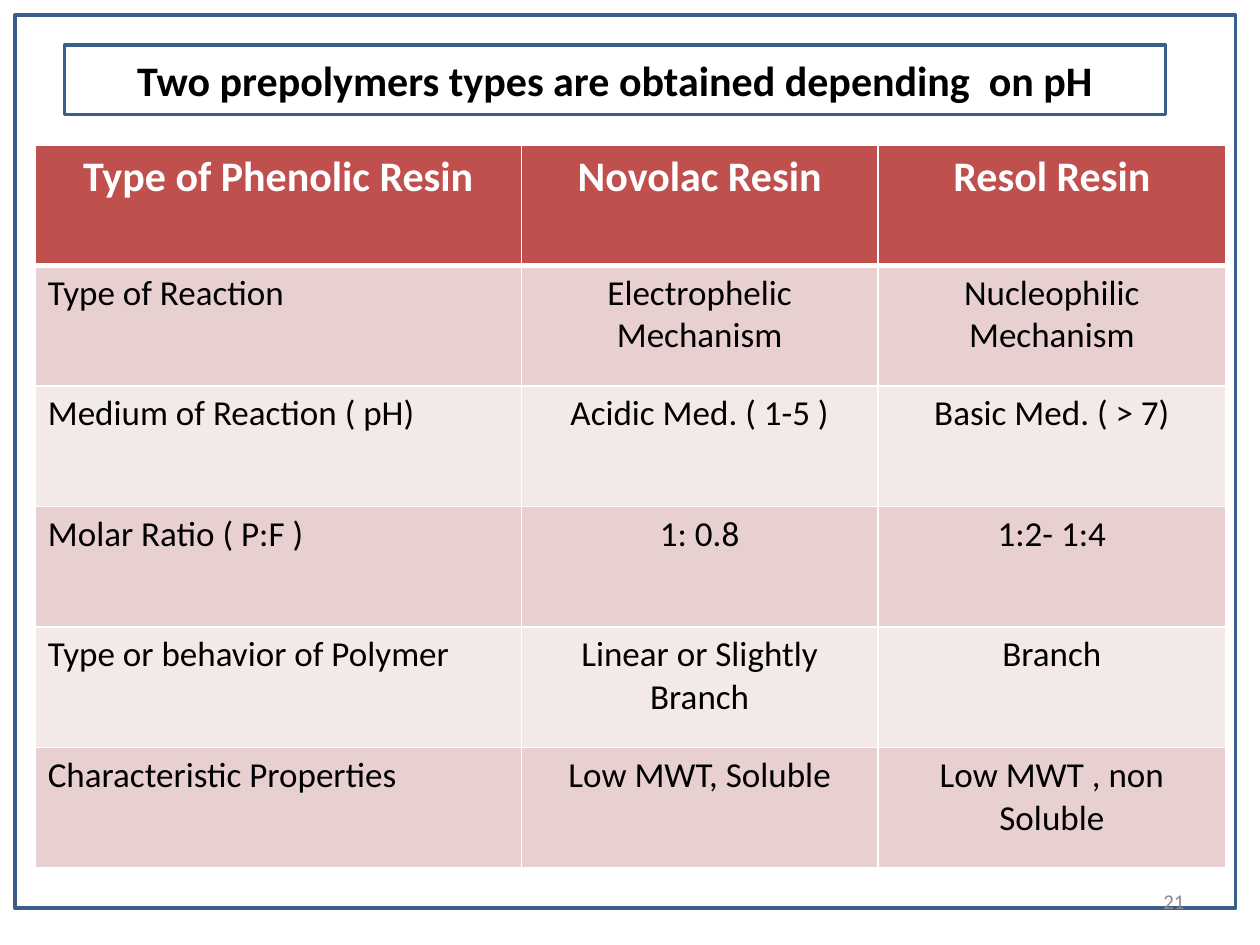
import pptx
import pptx.dml.color
import pptx.enum.shapes
import pptx.enum.text
import pptx.oxml
import pptx.oxml.ns
import pptx.util
from pptx.util import Cm, Pt

ALIGN = pptx.enum.text.PP_ALIGN
ANCHOR = pptx.enum.text.MSO_ANCHOR

TITLE = "Two prepolymers types are obtained depending  on pH"
PAGE_NUMBER = "21"
ROWS = [
    ("Type of Phenolic Resin", "Novolac Resin", "Resol Resin"),
    ("Type of Reaction", "Electrophelic Mechanism", "Nucleophilic Mechanism"),
    ("Medium of Reaction ( pH)", "Acidic Med. ( 1-5 )", "Basic Med. ( > 7)"),
    ("Molar Ratio ( P:F )", "1: 0.8", "1:2- 1:4"),
    ("Type or behavior of Polymer", "Linear or Slightly Branch", "Branch"),
    ("Characteristic Properties", "Low MWT, Soluble", "Low MWT , non Soluble"),
]

# Lengths in centimetres: left, top, width, height
FRAME_BOX = (0.3, 0.3, 24.61, 18.01)
TITLE_BOX = (1.3, 0.91, 22.2, 1.4)
NUMBER_BOX = (18.21, 17.65, 5.92, 1.02)
TABLE_LEFT, TABLE_TOP = 0.71, 2.92
COLUMN_WIDTHS = (9.8, 7.19, 7.01)
ROW_HEIGHT = 2.43

THEME = {
    "outline": "3A5F8C",
    "border": "FFFFFF",
    "header_fill": "C0504D",
    "bands": ("E8D0D0", "F4E9E9"),
    "title": {"size": 24, "bold": True, "color": "000000"},
    "header": {"size": 24, "bold": True, "color": "FFFFFF"},
    "body": {"size": 20, "bold": False, "color": "000000"},
    "number": {"size": 12, "bold": False, "color": "8C8C8C"},
}


def rgb(value):
    return pptx.dml.color.RGBColor.from_string(value)


def write(tf, text, style, align):
    p = tf.paragraphs[0]
    p.alignment = align
    r = p.add_run()
    r.text = text
    look = THEME[style]
    formats = {"name": "Calibri", "size": Pt(look["size"]), "bold": look["bold"]}
    for name, value in formats.items():
        setattr(r.font, name, value)
    r.font.color.rgb = rgb(look["color"])


def add_outline(slide, box):
    sp = slide.shapes.add_shape(
        pptx.enum.shapes.MSO_SHAPE.RECTANGLE, *map(Cm, box))
    sp.shadow.inherit = False
    sp.fill.background()
    sp.line.color.rgb = rgb(THEME["outline"])
    sp.line.width = Pt(2)
    return sp


def set_borders(cell, bottom):
    """Draw the cell's four borders, 1 pt except for the bottom one."""
    for side, width in {"L": 1, "R": 1, "T": 1, "B": bottom}.items():
        cell._tc.get_or_add_tcPr().append(pptx.oxml.parse_xml(
            f'<a:ln{side} {pptx.oxml.ns.nsdecls("a")} w="{Pt(width)}">'
            f'<a:solidFill><a:srgbClr val="{THEME["border"]}"/></a:solidFill>'
            f'</a:ln{side}>'))


def add_resin_table(slide):
    table = slide.shapes.add_table(
        len(ROWS), len(COLUMN_WIDTHS), Cm(TABLE_LEFT), Cm(TABLE_TOP),
        Cm(sum(COLUMN_WIDTHS)), Cm(ROW_HEIGHT * len(ROWS))).table
    for column, width in zip(table.columns, COLUMN_WIDTHS):
        column.width = Cm(width)
    for i, texts in enumerate(ROWS):
        table.rows[i].height = Cm(ROW_HEIGHT)
        header = i == 0
        fill = THEME["header_fill"] if header else THEME["bands"][(i - 1) % 2]
        for j, text in enumerate(texts):
            cell = table.cell(i, j)
            set_borders(cell, 3 if header else 1)
            cell.fill.solid()
            cell.fill.fore_color.rgb = rgb(fill)
            write(cell.text_frame, text, "header" if header else "body",
                  ALIGN.CENTER if header or j else ALIGN.LEFT)


def main():
    prs = pptx.Presentation()
    prs.slide_width, prs.slide_height = Cm(25.4), Cm(19.05)
    slide = prs.slides.add_slide(prs.slide_layouts[6])

    add_outline(slide, FRAME_BOX)
    title = add_outline(slide, TITLE_BOX)
    title.text_frame.vertical_anchor = ANCHOR.MIDDLE
    write(title.text_frame, TITLE, "title", ALIGN.CENTER)

    add_resin_table(slide)

    tf = slide.shapes.add_textbox(*map(Cm, NUMBER_BOX)).text_frame
    tf.word_wrap = True
    tf.vertical_anchor = ANCHOR.MIDDLE
    write(tf, PAGE_NUMBER, "number", ALIGN.RIGHT)

    prs.save("out.pptx")


if __name__ == "__main__":
    main()
